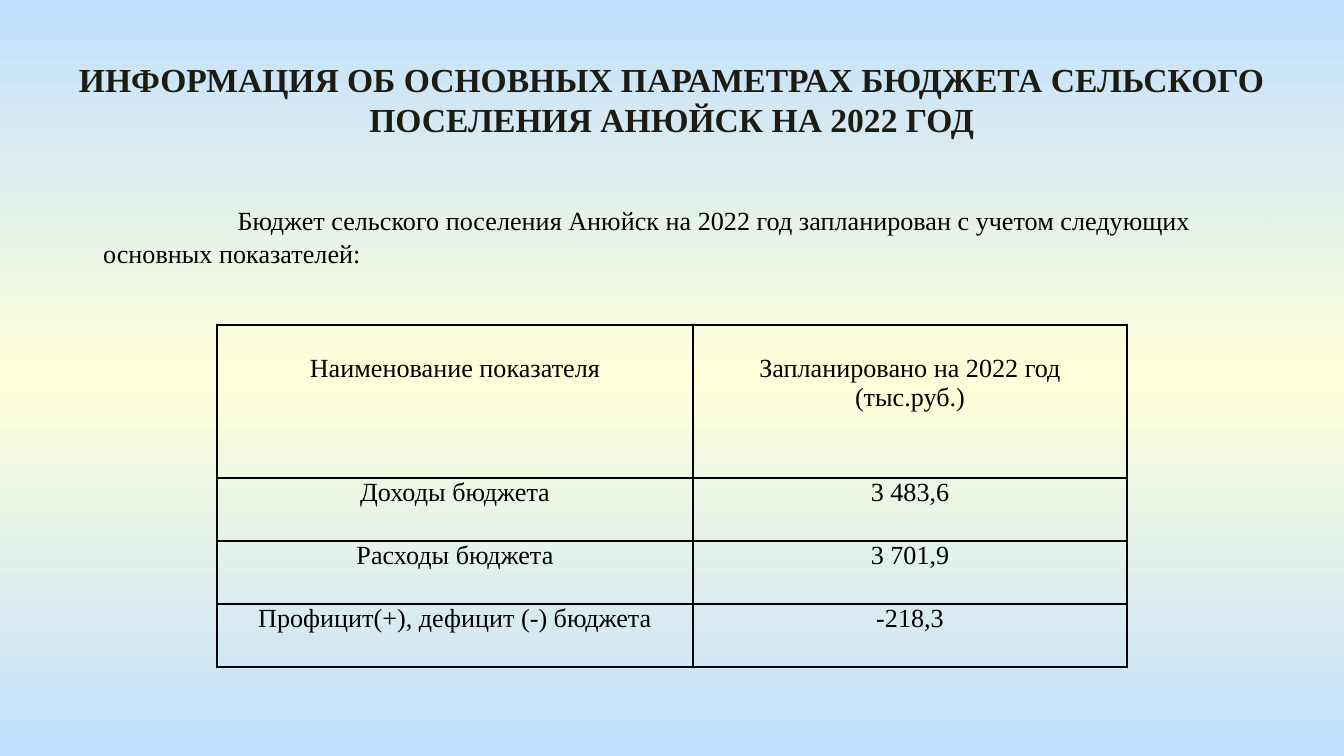
from copy import deepcopy

from lxml import etree
from pptx import Presentation
from pptx.dml.color import RGBColor
from pptx.enum.shapes import MSO_SHAPE
from pptx.enum.text import MSO_ANCHOR, PP_ALIGN
from pptx.oxml.ns import qn
from pptx.util import Cm, Pt

RECT = MSO_SHAPE.RECTANGLE
LEFT, CENTER = PP_ALIGN.LEFT, PP_ALIGN.CENTER
TOP = MSO_ANCHOR.TOP
FONT = "Times New Roman"
COLORS = {"sky": "C1E0FF", "cream": "FFFFD9", "title": "1E1C11", "ink": "000000"}


def write(frame, text, size=14, color="ink", bold=False, align=CENTER, space=None):
    frame.word_wrap = True
    para = frame.paragraphs[0]
    para.alignment = align
    para.line_spacing = space
    run = para.add_run()
    run.text = text
    run.font.name = FONT
    run.font.size = Pt(size)
    run.font.bold = bold
    run.font.color.rgb = RGBColor.from_string(COLORS[color])
    return para


def border(cell):
    props = cell._tc.get_or_add_tcPr()
    for spot, side in enumerate(("lnL", "lnR", "lnT", "lnB")):
        line = etree.Element(qn(f"a:{side}"), w=str(Pt(1)))
        fill = etree.SubElement(line, qn("a:solidFill"))
        etree.SubElement(fill, qn("a:srgbClr"), val=COLORS["ink"])
        props.insert(spot, line)


prs = Presentation()
prs.slide_width, prs.slide_height = Cm(25.4), Cm(14.29)
slide = prs.slides.add_slide(prs.slide_layouts[6])

# Background: sky to cream and back, from top to bottom
fill = slide.background.fill
fill.gradient()
fill.gradient_angle = 270
stops = slide.element.find(".//" + qn("a:gsLst"))
stops.append(deepcopy(stops[-1]))
for stop, place, name in zip(fill.gradient_stops, (0, 0.5, 1), ("sky", "cream", "sky")):
    stop.position = place
    stop.color.rgb = RGBColor.from_string(COLORS[name])

# Lead sentence in a box that takes the slide background as its fill
lead = slide.shapes.add_shape(RECT, Cm(1.7), Cm(3.71), Cm(22.2), Cm(1.63))
lead.shadow.inherit = False
lead.line.fill.background()
lead._element.set("useBgFill", "1")
lead.text_frame.vertical_anchor = TOP
para = write(
    lead.text_frame,
    "Бюджет сельского поселения Анюйск на 2022 год запланирован "
    "с учетом следующих основных показателей:",
    align=LEFT, space=Pt(17.7),
)
para._p.get_or_add_pPr().set("indent", str(Cm(2.54)))

# Title
title = slide.shapes.add_textbox(Cm(0.89), Cm(0.99), Cm(23.62), Cm(1.8))
write(
    title.text_frame,
    "ИНФОРМАЦИЯ ОБ ОСНОВНЫХ ПАРАМЕТРАХ БЮДЖЕТА СЕЛЬСКОГО "
    "ПОСЕЛЕНИЯ АНЮЙСК НА 2022 ГОД",
    size=18, color="title", bold=True,
)

# Table of budget figures
rows = [
    ("Наименование показателя", "Запланировано на 2022 год (тыс.руб.)"),
    ("Доходы бюджета", "3 483,6"),
    ("Расходы бюджета", "3 701,9"),
    ("Профицит(+), дефицит (-) бюджета", "-218,3"),
]
table = slide.shapes.add_table(4, 2, Cm(4.1), Cm(6.14), Cm(17.2), Cm(6.47)).table
table.first_row = table.horz_banding = False
table.columns[0].width, table.columns[1].width = Cm(9), Cm(8.2)
for r, texts in enumerate(rows):
    table.rows[r].height = Cm(1.19 if r else 2.9)
    for c, text in enumerate(texts):
        cell = table.cell(r, c)
        cell.fill.background()
        cell.margin_left = cell.margin_right = Cm(0.18)
        cell.margin_top = Cm(0 if r else 0.55)
        cell.margin_bottom = 0
        cell.vertical_anchor = TOP
        write(cell.text_frame, text)
        border(cell)

prs.save("out.pptx")
